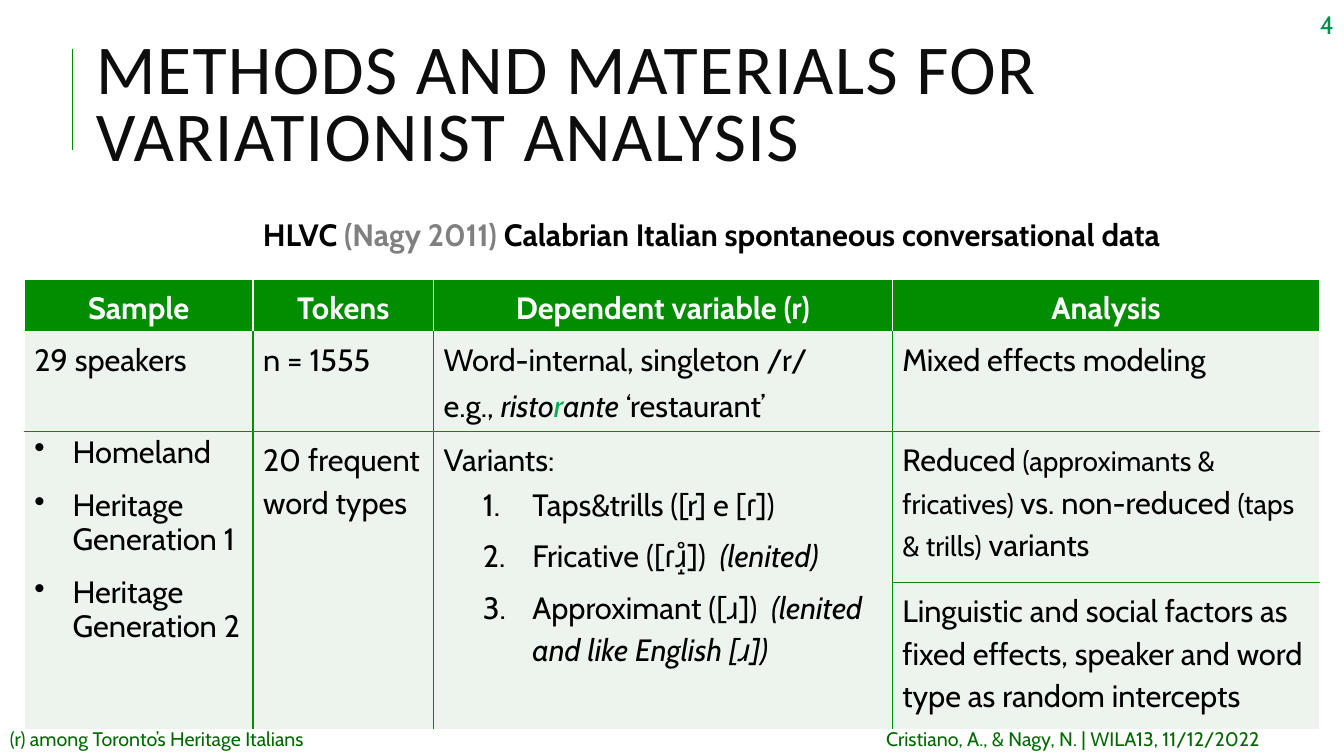
"""Build the methods and materials slide with its table of sample, tokens, variable and analysis."""
from lxml import etree
from pptx import Presentation
from pptx.dml.color import RGBColor
from pptx.enum.shapes import MSO_CONNECTOR as Connector
from pptx.enum.text import MSO_ANCHOR as Anchor, MSO_AUTO_SIZE as AutoSize, PP_ALIGN as Align
from pptx.oxml.ns import qn
from pptx.util import Inches, Pt

BLACK = RGBColor(0x00, 0x00, 0x00)
WHITE = RGBColor(0xFF, 0xFF, 0xFF)
INK = RGBColor(0x0D, 0x0D, 0x0D)
GREY = RGBColor(0x80, 0x80, 0x80)
GREEN = RGBColor(0x00, 0x8E, 0x00)
PALE = RGBColor(0xED, 0xF3, 0xED)
BRIGHT = RGBColor(0x00, 0xB0, 0x50)
NUMBER_GREEN = RGBColor(0x00, 0x8F, 0x51)
FOOTER_GREEN = RGBColor(0x00, 0x6A, 0x00)

ITALIC = {"italic": True}
SMALL = {"size": Pt(20)}
PLAIN = {"line_spacing": 1.14, "space_before": Pt(1), "space_after": Pt(1)}
CENTRED = {**PLAIN, "alignment": Align.CENTER}
BULLET = {**PLAIN, "line_spacing": 0.9, "space_after": Pt(13)}
NUMBERED = {**PLAIN, "space_after": Pt(5)}


def add_runs(paragraph, runs, color=BLACK, **base):
    """Write runs, each a string or a pair of text and its own format values."""
    for item in runs:
        text, extra = (item, {}) if isinstance(item, str) else item
        run = paragraph.add_run()
        run.text = text
        values = {"name": "Cabin", "size": Pt(22), "color": color, **base, **extra}
        run.font.color.rgb = values.pop("color")
        for name, value in values.items():
            setattr(run.font, name, value)


def add_label(slide, box, runs, alignment=Align.LEFT, **base):
    """Add a wrapping one-paragraph text box and return its paragraph."""
    frame = slide.shapes.add_textbox(*map(Inches, box)).text_frame
    frame.word_wrap = True
    paragraph = frame.paragraphs[0]
    paragraph.alignment = alignment
    add_runs(paragraph, runs, **base)
    return paragraph


presentation = Presentation()
presentation.slide_width = Inches(13.33)
presentation.slide_height = Inches(7.5)
slide = presentation.slides.add_slide(presentation.slide_layouts[5])

title = slide.shapes.title
title.left, title.top, title.width, title.height = map(Inches, (0.85, 0.25, 12.1, 1.64))
frame = title.text_frame
for name, value in {"word_wrap": True, "auto_size": AutoSize.NONE,
                    "vertical_anchor": Anchor.MIDDLE}.items():
    setattr(frame, name, value)
paragraph = frame.paragraphs[0]
paragraph.alignment = Align.LEFT
paragraph.line_spacing = 0.8
add_runs(paragraph, ["METHODS AND MATERIALS FOR VARIATIONIST ANALYSIS"],
         INK, name="Calibri", size=Pt(50))
paragraph.runs[0].font._element.set("spc", "100")

add_label(slide, (12.27, 0.04, 1.06, 0.3), ["4"], Align.RIGHT, color=NUMBER_GREEN, size=Pt(18))

rule = slide.shapes.add_connector(Connector.STRAIGHT, *map(Inches, (0.72, 0.49, 0.72, 1.49)))
rule.line.color.rgb = GREEN
rule.line.width = Pt(0.75)
etree.SubElement(rule._element.spPr, qn("a:effectLst"))

headings = ["Sample", "Tokens", "Dependent variable (r)", "Analysis"]
cells = {(0, column): [(CENTRED, [heading])] for column, heading in enumerate(headings)}
cells |= {
    (1, 0): [(PLAIN, ["29 speakers"])],
    (1, 1): [(PLAIN, ["n = 1555"])],
    (1, 2): [(PLAIN, ["Word-internal, singleton /r/"]),
             (PLAIN, ["e.g., ", ("risto", ITALIC), ("r", {**ITALIC, "color": BRIGHT}),
                      ("ante", ITALIC), " ‘restaurant’"])],
    (1, 3): [(PLAIN, ["Mixed effects modeling"])],
    (2, 0): [(BULLET, [group])
             for group in ("Homeland", "Heritage Generation 1", "Heritage Generation 2")],
    (2, 1): [(PLAIN, ["20 frequent word types"])],
    (2, 2): [(PLAIN, ["Variants:"]),
             (NUMBERED, ["Taps&trills ([r] e [ɾ])"]),
             (NUMBERED, ["Fricative ([ɾɹ̝̊])  ", ("(lenited)", ITALIC)]),
             (NUMBERED, ["Approximant ([ɹ])  ", ("(lenited and like English [ɹ])", ITALIC)])],
    (2, 3): [(PLAIN, ["Reduced ", ("(approximants & fricatives) ", SMALL), "vs. non-reduced ",
                      ("(taps & trills)", SMALL), " variants"])],
    (3, 3): [(PLAIN, ["Linguistic and social factors as fixed effects, "
                      "speaker and word type as random intercepts"])],
}
lists = {
    id(BULLET): (0.38, -0.38, "a:buChar", {"char": "•"}),
    id(NUMBERED): (0.88, -0.49, "a:buAutoNum", {"type": "arabicPeriod"}),
}

column_widths = [2.27, 1.79, 4.55, 4.24]
row_heights = [0.52, 0.99, 1.5, 1.46]
table_box = (0.24, 2.77, sum(column_widths), sum(row_heights))
table = slide.shapes.add_table(len(row_heights), len(column_widths),
                               *map(Inches, table_box)).table
for column, width in zip(table.columns, column_widths):
    column.width = Inches(width)
for row, height in zip(table.rows, row_heights):
    row.height = Inches(height)
for column in range(3):
    table.cell(2, column).merge(table.cell(3, column))

for row in range(len(row_heights)):
    for column in range(len(column_widths)):
        cell = table.cell(row, column)
        cell.fill.solid()
        cell.fill.fore_color.rgb = PALE if row else GREEN
        green_sides = {
            "L": row > 0 and column > 0,
            "R": row > 0 and column < 3,
            "T": row == 2 or (row, column) == (3, 3),
            "B": row == 1 or (row, column) == (2, 3),
        }
        for position, (side, is_green) in enumerate(green_sides.items()):
            border = etree.Element(qn(f"a:ln{side}"), w=str(Pt(1)))
            fill = etree.SubElement(border, qn("a:solidFill"))
            etree.SubElement(fill, qn("a:srgbClr"), val=str(GREEN if is_green else WHITE))
            cell._tc.get_or_add_tcPr().insert(position, border)
        for index, (layout, runs) in enumerate(cells.get((row, column), [])):
            frame = cell.text_frame
            paragraph = frame.add_paragraph() if index else frame.paragraphs[0]
            for name, value in layout.items():
                setattr(paragraph, name, value)
            if id(layout) in lists:
                margin, indent, tag, marker = lists[id(layout)]
                properties = paragraph._p.get_or_add_pPr()
                properties.set("marL", str(Inches(margin)))
                properties.set("indent", str(Inches(indent)))
                etree.SubElement(properties, qn(tag), marker)
            add_runs(paragraph, runs, BLACK if row else WHITE, bold=row == 0)

add_label(slide, (2.51, 2.09, 10.82, 0.5),
          ["HLVC", (" (Nagy 2011) ", {"color": GREY}),
           "Calabrian Italian spontaneous conversational data"], bold=True)

footer = add_label(slide, (0, 7.16, 13.33, 0.34),
                   ["(r) among Toronto’s Heritage Italians\t"
                    "Cristiano, A., & Nagy, N. | WILA13, 11/12/2022"],
                   color=FOOTER_GREEN, size=Pt(14))
tabs = etree.SubElement(footer._p.get_or_add_pPr(), qn("a:tabLst"))
etree.SubElement(tabs, qn("a:tab"), pos=str(Inches(8.69)), algn="l")

presentation.save("out.pptx")
